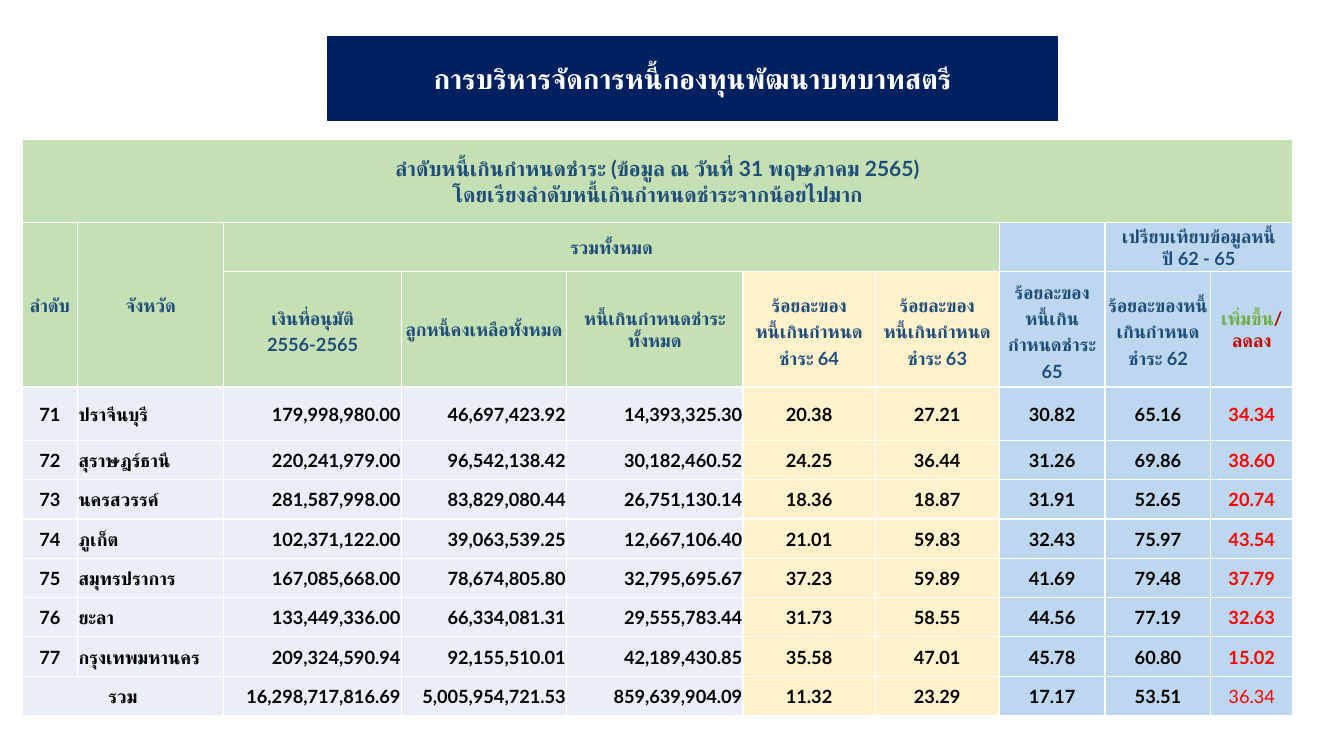
"""Build the slide on overdue debt of the women's role development fund."""
from copy import deepcopy
from dataclasses import dataclass

from lxml import etree
from pptx import Presentation
from pptx import util as u
from pptx.dml import color
from pptx.enum import text as t
from pptx.oxml import ns

GRID_COLUMNS, GRID_ROWS = 1333, 750
UNIT = u.Inches(13.33) // GRID_COLUMNS
FONT = "Lato"
COLOURS = {
    "navy": "002060", "white": "FFFFFF", "black": "000000", "heading": "1F4E79",
    "green": "C5E0B4", "yellow": "FFF2CC", "blue": "BDD7EE", "pale": "EAEFF7",
    "rise": "70AD47", "fall": "C00000", "red": "FF0000",
}
COLUMN_WIDTHS = [55, 145, 176, 164, 175, 131, 123, 105, 105, 81]
ROW_HEIGHTS = [83, 48, 115, 53] + [39] * 7
FIRST_BODY_ROW = 3
CENTRE, LEFT, RIGHT = t.PP_ALIGN.CENTER, t.PP_ALIGN.LEFT, t.PP_ALIGN.RIGHT
ALIGNMENTS = [CENTRE, LEFT] + [RIGHT] * 3 + [CENTRE] * 5


@dataclass(frozen=True)
class Header:
    """A heading cell with its place, span and paragraphs."""
    row: int
    column: int
    lines: tuple[str, ...]
    rows: int = 1
    columns: int = 1
    size: int = 13
    spacing: float = 1.0


HEADERS = [
    Header(0, 0, ("ลำดับหนี้เกินกำหนดชำระ (ข้อมูล ณ วันที่ 31 พฤษภาคม 2565)",
                  "โดยเรียงลำดับหนี้เกินกำหนดชำระจากน้อยไปมาก"), columns=10, size=15),
    Header(1, 0, ("ลำดับ",), rows=2),
    Header(1, 1, ("จังหวัด",), rows=2),
    Header(1, 2, ("รวมทั้งหมด",), columns=5),
    Header(1, 8, ("เปรียบเทียบข้อมูลหนี้", "ปี 62 - 65"), columns=2),
    Header(2, 2, ("เงินที่อนุมัติ\n2556-2565",), spacing=1.2),
    Header(2, 3, ("ลูกหนี้คงเหลือทั้งหมด",)),
    Header(2, 4, ("หนี้เกินกำหนดชำระทั้งหมด",)),
    Header(2, 5, ("ร้อยละของ\nหนี้เกินกำหนดชำระ 64",), spacing=1.2),
    Header(2, 6, ("ร้อยละของ\nหนี้เกินกำหนดชำระ 63",), spacing=1.2),
    Header(2, 7, ("ร้อยละของ\nหนี้เกินกำหนดชำระ 65",), spacing=1.2),
    Header(2, 8, ("ร้อยละของหนี้เกินกำหนดชำระ 62",), spacing=1.2),
]
PROVINCES = [
    ("71", "ปราจีนบุรี", "179,998,980.00", "46,697,423.92", "14,393,325.30",
     "20.38", "27.21", "30.82", "65.16", "34.34"),
    ("72", "สุราษฎร์ธานี", "220,241,979.00", "96,542,138.42", "30,182,460.52",
     "24.25", "36.44", "31.26", "69.86", "38.60"),
    ("73", "นครสวรรค์", "281,587,998.00", "83,829,080.44", "26,751,130.14",
     "18.36", "18.87", "31.91", "52.65", "20.74"),
    ("74", "ภูเก็ต", "102,371,122.00", "39,063,539.25", "12,667,106.40",
     "21.01", "59.83", "32.43", "75.97", "43.54"),
    ("75", "สมุทรปราการ", "167,085,668.00", "78,674,805.80", "32,795,695.67",
     "37.23", "59.89", "41.69", "79.48", "37.79"),
    ("76", "ยะลา", "133,449,336.00", "66,334,081.31", "29,555,783.44",
     "31.73", "58.55", "44.56", "77.19", "32.63"),
    ("77", "กรุงเทพมหานคร", "209,324,590.94", "92,155,510.01", "42,189,430.85",
     "35.58", "47.01", "45.78", "60.80", "15.02"),
    ("รวม", "", "16,298,717,816.69", "5,005,954,721.53", "859,639,904.09",
     "11.32", "23.29", "17.17", "53.51", "36.34"),
]


def rgb(name: str) -> color.RGBColor:
    """Look up a named colour."""
    return color.RGBColor.from_string(COLOURS[name])


def write(para, words: str, *, size: int = 13, colour: str = "heading",
          bold: bool = True, align=CENTRE, spacing: float = 1.0) -> None:
    """Add formatted text to a paragraph, breaking lines at newlines."""
    para.alignment = align
    para.line_spacing = spacing
    for index, line in enumerate(words.split("\n")):
        if index:
            para.add_line_break()
            para._p.findall(ns.qn("a:br"))[-1].insert(0, deepcopy(span._r.rPr))
        span = para.add_run()
        span.text = line
        span.font.name, span.font.size, span.font.bold = FONT, u.Pt(size), bold
        span.font.color.rgb = rgb(colour)
        etree.SubElement(span._r.rPr, ns.qn("a:cs"), typeface=FONT)


def cell_colour(row: int, column: int) -> str:
    """Choose a cell's fill from its place in the table."""
    if row == 0:
        return "green"
    if column >= 7:
        return "blue"
    if column >= 5 and row >= 2:
        return "yellow"
    return "green" if row < FIRST_BODY_ROW else "pale"


def format_cell(cell, fill: str) -> None:
    """Set a cell's borders, fill, margins and anchor."""
    properties = cell._tc.get_or_add_tcPr()
    for side in ("lnL", "lnR", "lnT", "lnB"):
        border = etree.SubElement(properties, ns.qn(f"a:{side}"), w=str(u.Pt(1)))
        solid = etree.SubElement(border, ns.qn("a:solidFill"))
        etree.SubElement(solid, ns.qn("a:srgbClr"), val=COLOURS["white"])
    cell.fill.solid()
    cell.fill.fore_color.rgb = rgb(fill)
    cell.margin_left = cell.margin_top = cell.margin_right = UNIT
    cell.margin_bottom = 0
    cell.vertical_anchor = t.MSO_ANCHOR.MIDDLE


def draw_title(page) -> None:
    """Shape the title placeholder as a pentagon banner."""
    banner = page.shapes.title
    banner.left, banner.top, banner.width, banner.height = (
        UNIT * share for share in (325, 56, 724, 44))
    outline = etree.SubElement(banner._element.spPr, ns.qn("a:prstGeom"), prst="homePlate")
    etree.SubElement(outline, ns.qn("a:avLst"))
    banner.fill.solid()
    banner.fill.fore_color.rgb = banner.line.color.rgb = rgb("navy")
    banner.line.width = u.Pt(0.75)
    frame = banner.text_frame
    frame.word_wrap = True
    frame.auto_size = t.MSO_AUTO_SIZE.SHAPE_TO_FIT_TEXT
    frame.vertical_anchor = t.MSO_ANCHOR.MIDDLE
    write(frame.paragraphs[0], "การบริหารจัดการหนี้กองทุนพัฒนาบทบาทสตรี",
          size=20, colour="white")


def draw_headers(table) -> None:
    """Merge and fill the heading cells."""
    for header in HEADERS:
        cell = table.cell(header.row, header.column)
        if header.rows * header.columns > 1:
            cell.merge(table.cell(header.row + header.rows - 1,
                                  header.column + header.columns - 1))
        for index, line in enumerate(header.lines):
            frame = cell.text_frame
            para = frame.add_paragraph() if index else frame.paragraphs[0]
            write(para, line, size=header.size, spacing=header.spacing)
    change = table.cell(2, 9).text_frame.paragraphs[0]
    write(change, "เพิ่มขึ้น", colour="rise")
    write(change, "/ลดลง", colour="fall")


def draw_table(page) -> None:
    """Draw the debt table with its headings, provinces and total."""
    frame = page.shapes.add_table(
        len(ROW_HEIGHTS), len(COLUMN_WIDTHS), UNIT * 22, UNIT * 138,
        UNIT * sum(COLUMN_WIDTHS), UNIT * sum(ROW_HEIGHTS))
    table = frame.table
    table.first_row = table.horz_banding = False
    for column, width in zip(table.columns, COLUMN_WIDTHS):
        column.width = UNIT * width
    for row, height in zip(table.rows, ROW_HEIGHTS):
        row.height = UNIT * height
    for row in range(len(ROW_HEIGHTS)):
        for column in range(len(COLUMN_WIDTHS)):
            format_cell(table.cell(row, column), cell_colour(row, column))
    draw_headers(table)
    last_row, last_column = len(ROW_HEIGHTS) - 1, len(COLUMN_WIDTHS) - 1
    table.cell(last_row, 0).merge(table.cell(last_row, 1))
    for row, values in enumerate(PROVINCES, FIRST_BODY_ROW):
        for column, value in enumerate(values):
            if value:
                is_change = column == last_column
                write(table.cell(row, column).text_frame.paragraphs[0], value,
                      colour="red" if is_change else "black",
                      bold=not (is_change and row == last_row),
                      align=ALIGNMENTS[column])


def main() -> None:
    """Create and save the deck."""
    deck = Presentation()
    deck.slide_width, deck.slide_height = UNIT * GRID_COLUMNS, UNIT * GRID_ROWS
    page = deck.slides.add_slide(deck.slide_layouts[5])
    draw_title(page)
    draw_table(page)
    deck.save("out.pptx")


if __name__ == "__main__":
    main()
